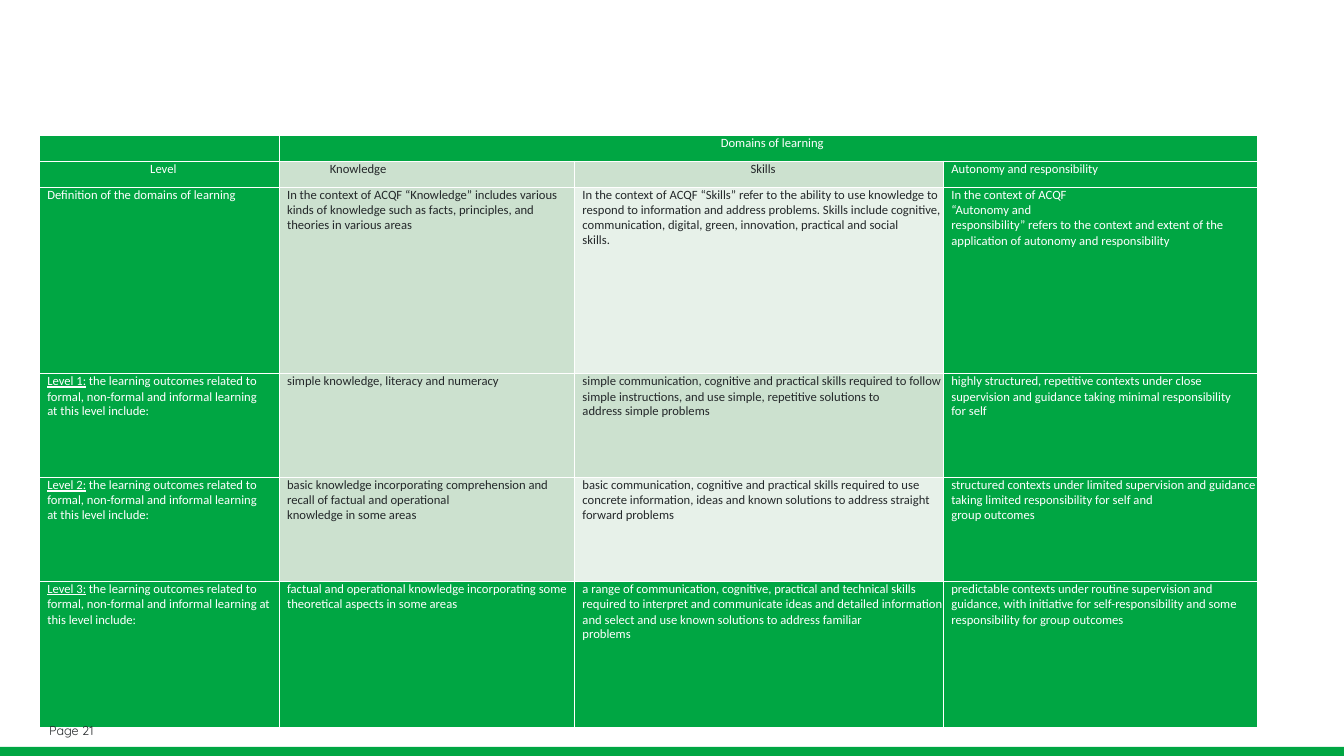
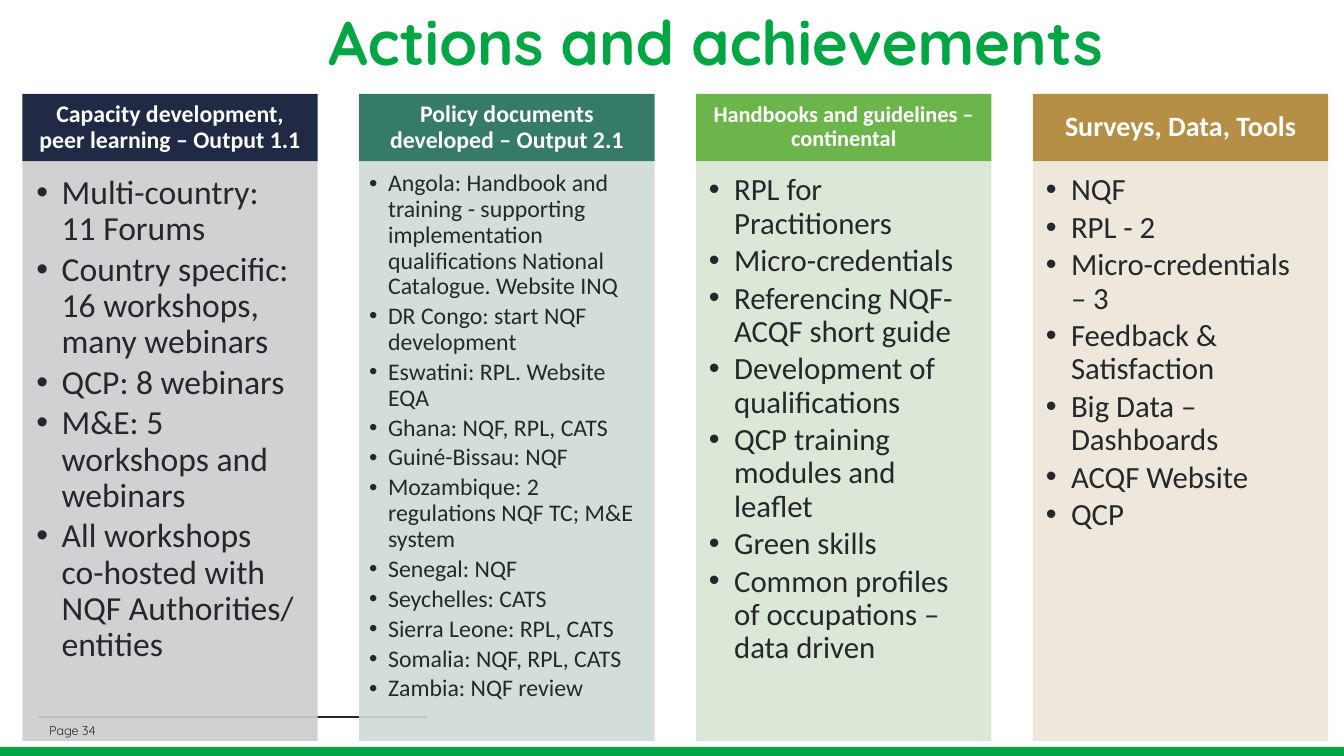
import pptx
import pptx.util
import pptx.dml.color
import pptx.enum.shapes
import pptx.enum.text
import pptx.oxml
import pptx.oxml.ns
from lxml import etree

Pt = pptx.util.Pt
ALIGN = pptx.enum.text.PP_ALIGN
ANCHOR = pptx.enum.text.MSO_ANCHOR
RECTANGLE = pptx.enum.shapes.MSO_SHAPE.RECTANGLE
STRAIGHT = pptx.enum.shapes.MSO_CONNECTOR.STRAIGHT

COLORS = {
    "white": "FFFFFF", "green": "00A643", "ink": "24282A",
    "sage": "CCE1CF", "mist": "E7F1E9",
    "navy": "202A44", "navy tint": "CDCDCF",
    "teal": "367B67", "teal tint": "CFDBD8",
    "leaf": "6CB54A", "leaf tint": "D8E5D3",
    "gold": "B48F45", "gold tint": "EDE5D8",
}
BODY_FONT, DISPLAY_FONT = "Calibri", "Quicksand"

# Learning domains: one row per level, cells as lists of paragraphs
COLUMN_WIDTHS = [171.3, 211, 263.5, 224]
ROW_HEIGHTS = [18.7, 18.7, 133.2, 74.2, 74.2, 104.4]
ROW_FILLS = [
    ["green"] * 4,
    ["green", "sage", "sage", "green"],
    ["green", "sage", "mist", "green"],
    ["green", "sage", "sage", "green"],
    ["green", "sage", "mist", "green"],
    ["green"] * 4,
]
OUTCOMES = "the learning outcomes related to formal, non-formal and informal learning"
DOMAINS = [
    [[""], ["Domains of learning"], [""], [""]],
    [["Level"], ["Knowledge"], ["Skills"], ["Autonomy and responsibility"]],
    [
        ["Definition of the domains of learning"],
        ["In the context of ACQF “Knowledge” includes various kinds of knowledge such as "
         "facts, principles, and theories in various areas"],
        ["In the context of ACQF “Skills” refer to the ability to use knowledge to respond to "
         "information and address problems. Skills include cognitive, communication, digital, "
         "green, innovation, practical and social", "skills."],
        ["In the context of ACQF", "“Autonomy and",
         "responsibility” refers to the context and extent of the application of autonomy "
         "and responsibility"],
    ],
    [
        [f"Level 1: {OUTCOMES}", "at this level include:"],
        ["simple knowledge, literacy and numeracy"],
        ["simple communication, cognitive and practical skills required to follow simple "
         "instructions, and use simple, repetitive solutions to", "address simple problems"],
        ["highly structured, repetitive contexts under close supervision and guidance taking "
         "minimal responsibility", "for self"],
    ],
    [
        [f"Level 2: {OUTCOMES}", "at this level include:"],
        ["basic knowledge incorporating comprehension and recall of factual and operational",
         "knowledge in some areas"],
        ["basic communication, cognitive and practical skills required to use concrete "
         "information, ideas and known solutions to address straight", "forward problems"],
        ["structured contexts under limited supervision and guidance taking limited "
         "responsibility for self and", "group outcomes"],
    ],
    [
        [f"Level 3: {OUTCOMES} at this level include:"],
        ["factual and operational knowledge incorporating some theoretical aspects in some areas"],
        ["a range of communication, cognitive, practical and technical skills required to "
         "interpret and communicate ideas and detailed information and select and use known "
         "solutions to address familiar", "problems"],
        ["predictable contexts under routine supervision and guidance, with initiative for "
         "self-responsibility and some responsibility for group outcomes"],
    ],
]
CENTERED_HEADINGS = {"Domains of learning", "Level", "Skills"}

TITLE = "Actions and achievements"
# heading, heading size, colour, item size, bullet indent, items
ACHIEVEMENTS = [
    ("Capacity development, peer learning – Output 1.1", 17, "navy", 24, 18, [
        "Multi-country: 11 Forums",
        "Country specific: 16 workshops, many webinars",
        "QCP: 8 webinars",
        "M&E: 5 workshops and webinars",
        "All workshops co-hosted with NQF Authorities/ entities",
    ]),
    ("Policy documents developed – Output 2.1", 17, "teal", 17, 13.5, [
        "Angola: Handbook and training - supporting implementation qualifications National "
        "Catalogue. Website INQ",
        "DR Congo: start NQF development",
        "Eswatini: RPL. Website EQA",
        "Ghana: NQF, RPL, CATS",
        "Guiné-Bissau: NQF",
        "Mozambique: 2 regulations NQF TC; M&E system",
        "Senegal: NQF",
        "Seychelles: CATS",
        "Sierra Leone: RPL, CATS",
        "Somalia: NQF, RPL, CATS",
        "Zambia: NQF review",
    ]),
    ("Handbooks and guidelines – continental", 16, "leaf", 22, 18, [
        "RPL for Practitioners",
        "Micro-credentials",
        "Referencing NQF-ACQF short guide",
        "Development of qualifications",
        "QCP training modules and leaflet",
        "Green skills",
        "Common profiles of occupations – data driven",
    ]),
    ("Surveys, Data, Tools", 20, "gold", 22, 18, [
        "NQF",
        "RPL - 2",
        "Micro-credentials – 3",
        "Feedback & Satisfaction",
        "Big Data – Dashboards",
        "ACQF Website",
        "QCP",
    ]),
]


def rgb(name):
    return pptx.dml.color.RGBColor.from_string(COLORS[name])


def set_font(paragraph, size, color, face=BODY_FONT, bold=False):
    font = paragraph.font
    font.name, font.size, font.bold = face, Pt(size), bold
    font.color.rgb = rgb(color)


def set_margins(holder, left, top, right, bottom):
    holder.margin_left, holder.margin_top = Pt(left), Pt(top)
    holder.margin_right, holder.margin_bottom = Pt(right), Pt(bottom)


def add_block(slide, box, color):
    block = slide.shapes.add_shape(RECTANGLE, *map(Pt, box))
    block.shadow.inherit = False
    block.fill.solid()
    block.fill.fore_color.rgb = rgb(color)
    block.line.fill.background()
    return block


def add_label(slide, box, text, size, color, face, bold=False):
    frame = slide.shapes.add_textbox(*map(Pt, box)).text_frame
    frame.word_wrap = True
    frame.vertical_anchor = ANCHOR.MIDDLE
    paragraph = frame.paragraphs[0]
    paragraph.text = text
    set_font(paragraph, size, color, face, bold)
    return paragraph


def add_base(deck):
    """Start a slide with the footer rule and green band."""
    slide = deck.slides.add_slide(deck.slide_layouts[6])
    add_block(slide, (-2, 533.5, 965, 9.4), "green")
    rule = slide.shapes.add_connector(STRAIGHT, Pt(28), Pt(512), Pt(305.3), Pt(512))
    rule.line.color.rgb = rgb("ink")
    rule.line.width = Pt(1.5)
    etree.SubElement(rule._element.spPr, pptx.oxml.ns.qn("a:effectLst"))
    return slide


def add_page_number(slide, number):
    add_label(slide, (28, 514.8, 292.3, 13.7), f"Page {number}", 9, "ink", DISPLAY_FONT)


def set_borders(cell):
    for position, side in enumerate("LRTB"):
        border = pptx.oxml.parse_xml(
            f'<a:ln{side} {pptx.oxml.ns.nsdecls("a")} w="12700"><a:solidFill>'
            f'<a:srgbClr val="{COLORS["white"]}"/></a:solidFill></a:ln{side}>')
        cell._tc.get_or_add_tcPr().insert(position, border)


def fill_cell(cell, paragraphs, fill, indent):
    cell.fill.solid()
    cell.fill.fore_color.rgb = rgb(fill)
    set_borders(cell)
    set_margins(cell, indent, 0, 0, 0)
    frame = cell.text_frame
    for index, text in enumerate(paragraphs):
        paragraph = frame.add_paragraph() if index else frame.paragraphs[0]
        if text.startswith("Level "):
            level, colon, rest = text.partition(":")
            name = paragraph.add_run()
            name.text = level + colon
            name.font.underline = True
            paragraph.add_run().text = rest
        else:
            paragraph.text = text
        set_font(paragraph, 9, "white" if fill == "green" else "ink")
        if text in CENTERED_HEADINGS:
            paragraph.alignment = ALIGN.CENTER
        if 0 < index == len(paragraphs) - 1 and len(text) < 40:
            paragraph.line_spacing = Pt(10.1)


def build_domains(deck):
    slide = add_base(deck)
    table = slide.shapes.add_table(
        len(ROW_HEIGHTS), len(COLUMN_WIDTHS), Pt(28.3), Pt(96.5),
        Pt(sum(COLUMN_WIDTHS)), Pt(sum(ROW_HEIGHTS))).table
    table.first_row = table.horz_banding = False
    for column, width in zip(table.columns, COLUMN_WIDTHS):
        column.width = Pt(width)
    for row, height in zip(table.rows, ROW_HEIGHTS):
        row.height = Pt(height)
    for r, (contents, fills) in enumerate(zip(DOMAINS, ROW_FILLS)):
        for c, (paragraphs, fill) in enumerate(zip(contents, fills)):
            indent = 36 if paragraphs == ["Knowledge"] else 5.5
            fill_cell(table.cell(r, c), paragraphs, fill, indent)
    table.cell(0, 1).merge(table.cell(0, 3))
    # The empty corner cell must not force a taller row
    table.cell(0, 0).text_frame.paragraphs[0].font.size = Pt(9)
    add_page_number(slide, 21)


def add_heading(slide, box, text, size, color):
    frame = add_block(slide, box, color).text_frame
    frame.word_wrap = True
    frame.vertical_anchor = ANCHOR.MIDDLE
    set_margins(frame, .56 * size, .32 * size, .56 * size, .32 * size)
    heading = frame.paragraphs[0]
    heading.text = text
    heading.alignment = ALIGN.CENTER
    heading.line_spacing = 0.9
    set_font(heading, size, "white", bold=True)


def add_items(slide, box, items, size, indent, color):
    panel = add_block(slide, box, color)
    tint = panel._element.spPr.find(".//" + pptx.oxml.ns.qn("a:srgbClr"))
    etree.SubElement(tint, pptx.oxml.ns.qn("a:alpha"), val="90000")
    frame = panel.text_frame
    frame.word_wrap = True
    frame.vertical_anchor = ANCHOR.TOP
    set_margins(frame, .42 * size, .42 * size, .56 * size, .63 * size)
    for index, item in enumerate(items):
        paragraph = frame.add_paragraph() if index else frame.paragraphs[0]
        paragraph.text = item
        paragraph.alignment = ALIGN.LEFT
        paragraph.line_spacing = 0.9
        paragraph.space_after = Pt(3)
        properties = paragraph._p.get_or_add_pPr()
        properties.set("marL", str(Pt(indent)))
        properties.set("indent", str(-Pt(indent)))
        etree.SubElement(properties, pptx.oxml.ns.qn("a:buFont"), typeface="Arial")
        etree.SubElement(properties, pptx.oxml.ns.qn("a:buChar"), char="•")
        set_font(paragraph, size, "ink")


def build_achievements(deck):
    slide = add_base(deck)
    title = add_label(slide, (126, 0, 771, 65.5), TITLE, 44, "green", DISPLAY_FONT, True)
    title.alignment = ALIGN.CENTER
    title.line_spacing = 0.9
    left, pitch, width, top, head, body = 16, 240.6, 211, 67, 48.3, 414
    for index, (heading, heading_size, color, size, indent, items) in enumerate(ACHIEVEMENTS):
        x = left + index * pitch
        add_heading(slide, (x, top, width, head), heading, heading_size, color)
        add_items(slide, (x, top + head, width, body), items, size, indent, f"{color} tint")
    add_page_number(slide, 34)


def main():
    deck = pptx.Presentation()
    deck.slide_width, deck.slide_height = Pt(960), Pt(540)
    build_domains(deck)
    build_achievements(deck)
    deck.save("out.pptx")


if __name__ == "__main__":
    main()
